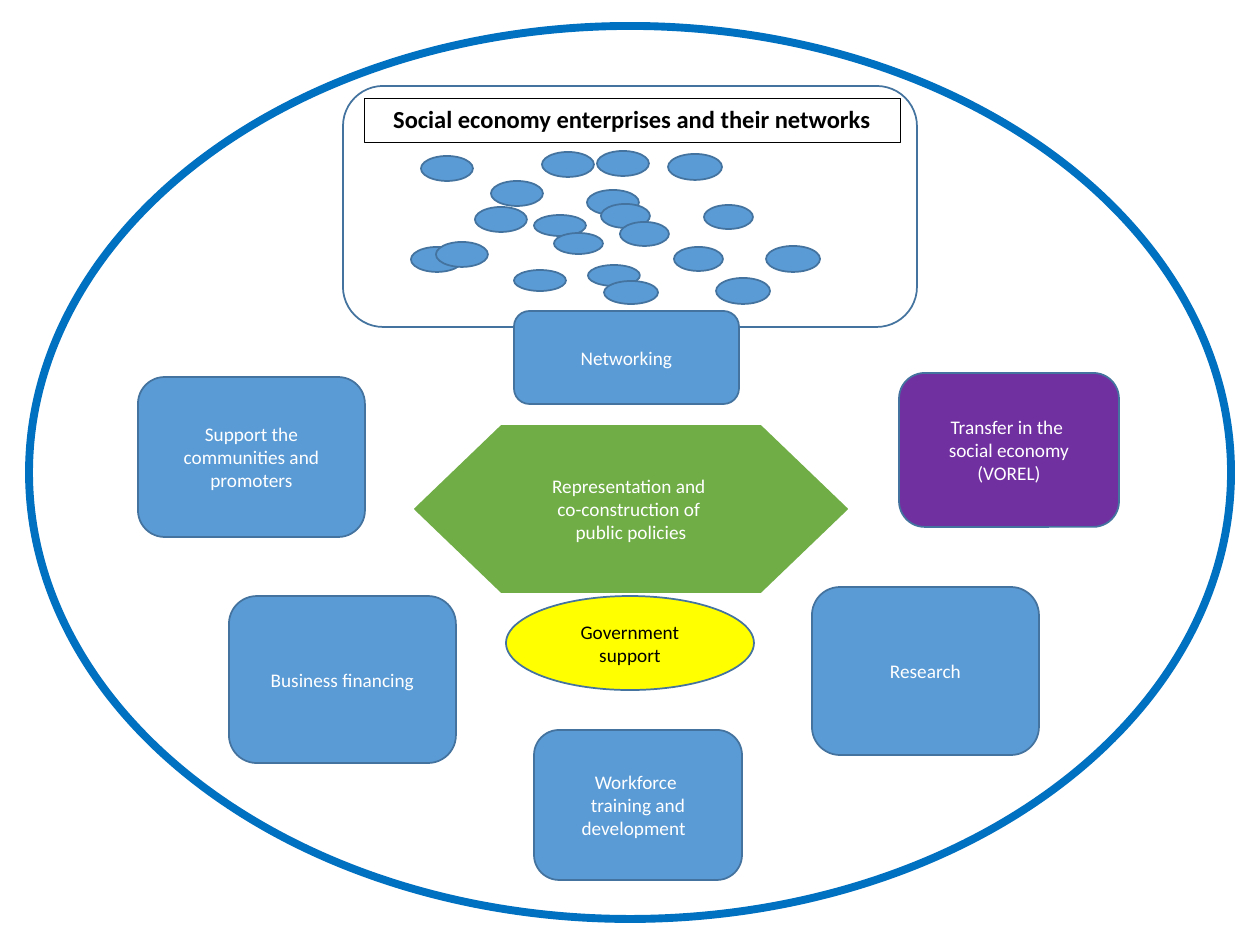
from lxml import etree
from pptx import Presentation
from pptx.dml.color import RGBColor
from pptx.enum.shapes import MSO_SHAPE
from pptx.enum.text import MSO_ANCHOR, PP_ALIGN
from pptx.oxml.ns import qn
from pptx.util import Emu, Pt

OVAL = MSO_SHAPE.OVAL
RECT = MSO_SHAPE.RECTANGLE
ROUND = MSO_SHAPE.FLOWCHART_ALTERNATE_PROCESS
HEX = MSO_SHAPE.FLOWCHART_PREPARATION
CENTER = PP_ALIGN.CENTER
TOP, MIDDLE = MSO_ANCHOR.TOP, MSO_ANCHOR.MIDDLE

SCALE = 914400 / 126
COLORS = {
    "blue": "5B9BD5", "edge": "43739E", "ring": "0070C0", "green": "70AD47",
    "yellow": "FFFF00", "purple": "7030A0", "white": "FFFFFF", "black": "000000",
}

# Each size of dot with the left and top of the dots that have it, back to front
DOTS = [
    ((52, 25), [(421, 156), (491, 181), (411, 247), (475, 207), (436, 242),
                (542, 152), (597, 151), (587, 190)]),
    ((49, 24), [(601, 204), (620, 222)]),
    ((52, 21), [(534, 215)]),
    ((49, 21), [(554, 233)]),
    ((52, 21), [(514, 270), (588, 265)]),
    ((54, 23), [(604, 281)]),
    ((54, 26), [(668, 154), (766, 246), (716, 278)]),
    ((49, 24), [(704, 205), (674, 247)]),
]

# Kind, place, fill, line, text colour, text; \v breaks a line
ROLES = [
    (ROUND, (514, 311, 225, 93), "blue", "edge", "white", "Networking"),
    (HEX, (415, 426, 432, 166), "green", "green", "white",
     "Representation and \vco-construction of \npublic policies"),
    (OVAL, (506, 596, 248, 94), "yellow", "edge", "black", "Government support"),
    (ROUND, (534, 730, 208, 150), "blue", "edge", "white",
     "Workforce \vtraining and development  "),
    (ROUND, (899, 373, 220, 154), "purple", "edge", "white",
     "Transfer in the \vsocial economy (VOREL)"),
    (ROUND, (812, 587, 227, 168), "blue", "edge", "white", "Research"),
    (ROUND, (138, 377, 227, 160), "blue", "edge", "white",
     "Support the communities and promoters"),
    (ROUND, (229, 596, 227, 167), "blue", "edge", "white", "Business financing"),
]


def px(count):
    return Emu(round(count * SCALE))


def rgb(name):
    return RGBColor.from_string(COLORS[name])


def add_shape(shapes, kind, place, fill="blue", line="edge", width=1):
    """Add a flat shape; a fill of None leaves it hollow."""
    shape = shapes.add_shape(kind, *map(px, place))
    shape.shadow.inherit = False
    if fill:
        shape.fill.solid()
        shape.fill.fore_color.rgb = rgb(fill)
    else:
        shape.fill.background()
    shape.line.color.rgb = rgb(line)
    shape.line.width = Pt(width)
    return shape


def put_text(shape, text, color, size=11, bold=False, anchor=MIDDLE):
    frame = shape.text_frame
    frame.text = text
    frame.word_wrap = True
    frame.vertical_anchor = anchor
    style = {"name": "Calibri", "size": Pt(size), "bold": bold}
    for para in frame.paragraphs:
        para.alignment = CENTER
        for run in para.runs:
            for key, value in style.items():
                setattr(run.font, key, value)
            run.font.color.rgb = rgb(color)
        for gap in para._p.findall(qn("a:br")):
            etree.SubElement(gap, qn("a:rPr"), sz=str(size * 100))


def add_firms(slide):
    """Group the panel, its title and the scattered dots."""
    shapes = slide.shapes.add_group_shape().shapes
    add_shape(shapes, ROUND, (343, 86, 574, 241), fill=None)
    title = add_shape(shapes, RECT, (364, 98, 536, 44), "white", "black", 0.5)
    put_text(title, "Social economy enterprises and their networks",
             "black", 14, True, TOP)
    for size, spots in DOTS:
        for spot in spots:
            add_shape(shapes, OVAL, spot + size)


def main():
    deck = Presentation()
    deck.slide_width, deck.slide_height = px(1260), px(945)
    slide = deck.slides.add_slide(deck.slide_layouts[6])
    add_firms(slide)
    add_shape(slide.shapes, OVAL, (29, 26, 1202, 893), None, "ring", 4.5)
    for kind, place, fill, line, color, text in ROLES:
        put_text(add_shape(slide.shapes, kind, place, fill, line), text, color)
    deck.save("out.pptx")


if __name__ == "__main__":
    main()
